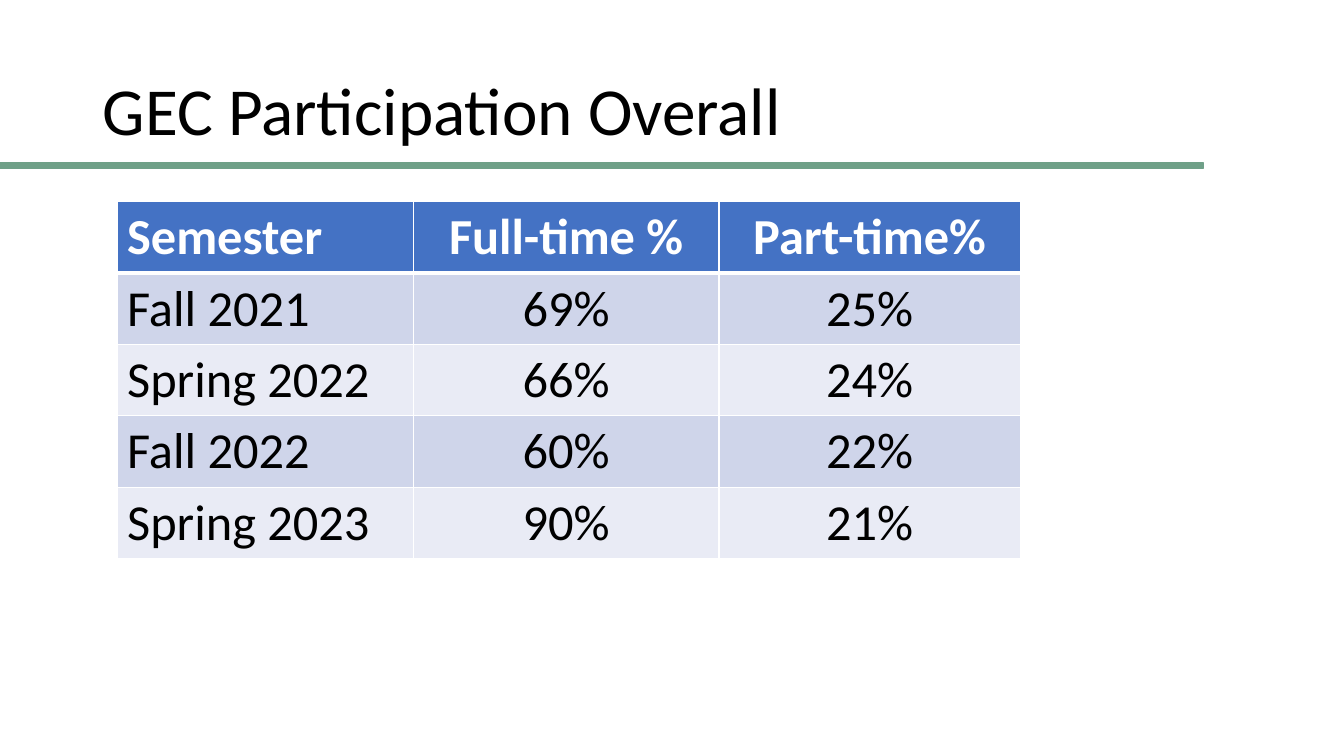
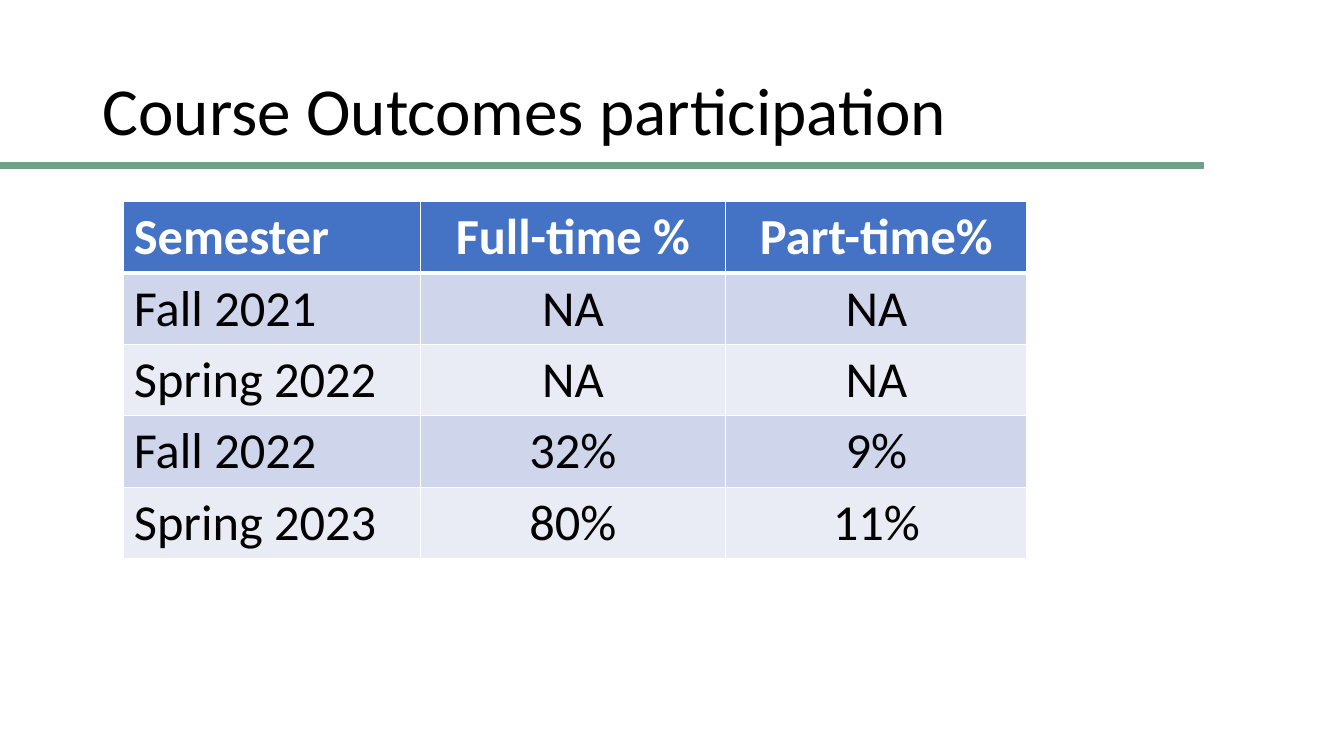
from lxml.etree import SubElement as Sub
from pptx import Presentation
from pptx.dml.color import RGBColor
from pptx.enum.shapes import MSO_SHAPE as Kind
from pptx.enum.text import MSO_ANCHOR as Anchor, PP_ALIGN as Align
from pptx.oxml.ns import qn
from pptx.util import Cm, Pt

FONT = "Calibri"
BLACK, WHITE = "000000", "FFFFFF"
GREEN, BLUE = "6FA088", "4472C4"
BANDS = ("E9EBF5", "CFD5EA")
WIDTHS = (7.47, 7.7, 7.59)
HEIGHT = 1.8
HEAD = ("Semester", "Full-time %", "Part-time%")
TERMS = ("Fall 2021", "Spring 2022", "Fall 2022", "Spring 2023")
SLIDES = (
    ("GEC Participation Overall", 2.95,
     (("69%", "25%"), ("66%", "24%"), ("60%", "22%"), ("90%", "21%"))),
    ("Course Outcomes participation", 3.12,
     (("NA", "NA"), ("NA", "NA"), ("32%", "9%"), ("80%", "11%"))),
)


def paint(fill, color):
    """Give a fill one solid colour."""
    fill.solid()
    fill.fore_color.rgb = RGBColor.from_string(color)


def write(frame, text, size=36, color=BLACK, bold=False, align=Align.LEFT, lead=None):
    """Write one formatted paragraph into a text frame."""
    par = frame.paragraphs[0]
    par.alignment = align
    par.line_spacing = lead
    run = par.add_run()
    run.text = text
    font = run.font
    font.name, font.size, font.bold = FONT, Pt(size), bold
    paint(font.fill, color)


def add_band(slide):
    """Draw the green rule below the title."""
    band = slide.shapes.add_shape(Kind.RECTANGLE, Cm(0), Cm(4.11), Cm(30.33), Cm(0.13))
    band.shadow.inherit = False
    paint(band.fill, GREEN)
    paint(band.line.fill, GREEN)
    band.line.width = Pt(1)


def add_title(slide, text):
    """Place the slide title."""
    box = slide.shapes.add_textbox(Cm(2.34), Cm(1.02), Cm(29.21), Cm(3.68))
    frame = box.text_frame
    frame.word_wrap = True
    frame.vertical_anchor = Anchor.MIDDLE
    write(frame, text, size=48, lead=0.9)


def set_edges(cell, top, bottom):
    """Draw white cell borders, with widths in points for top and bottom."""
    props = cell._tc.get_or_add_tcPr()
    for side, width in (("L", 1), ("R", 1), ("T", top), ("B", bottom)):
        line = Sub(props, qn("a:ln" + side), w=str(Pt(width)))
        Sub(Sub(line, qn("a:solidFill")), qn("a:srgbClr"), val=WHITE)


def add_grid(slide, left, rows):
    """Add a table with a blue header and banded rows."""
    shape = slide.shapes.add_table(len(rows), len(WIDTHS), Cm(left), Cm(5.08),
                                   Cm(sum(WIDTHS)), Cm(HEIGHT * len(rows)))
    table = shape.table
    table.horz_banding = False
    for col, width in zip(table.columns, WIDTHS):
        col.width = Cm(width)
    for i, row in enumerate(rows):
        head = i == 0
        for j, text in enumerate(row):
            cell = table.cell(i, j)
            set_edges(cell, 3 if i == 1 else 1, 3 if head else 1)
            paint(cell.fill, BLUE if head else BANDS[i % 2])
            write(cell.text_frame, text, color=WHITE if head else BLACK, bold=head,
                  align=Align.CENTER if j else Align.LEFT)


def main():
    """Build and save the slides."""
    deck = Presentation()
    deck.slide_width, deck.slide_height = Cm(33.87), Cm(19.05)
    for title, left, rates in SLIDES:
        slide = deck.slides.add_slide(deck.slide_layouts[6])
        add_band(slide)
        add_title(slide, title)
        rows = [HEAD] + [(term, *pair) for term, pair in zip(TERMS, rates)]
        add_grid(slide, left, rows)
    deck.save("out.pptx")


if __name__ == "__main__":
    main()
